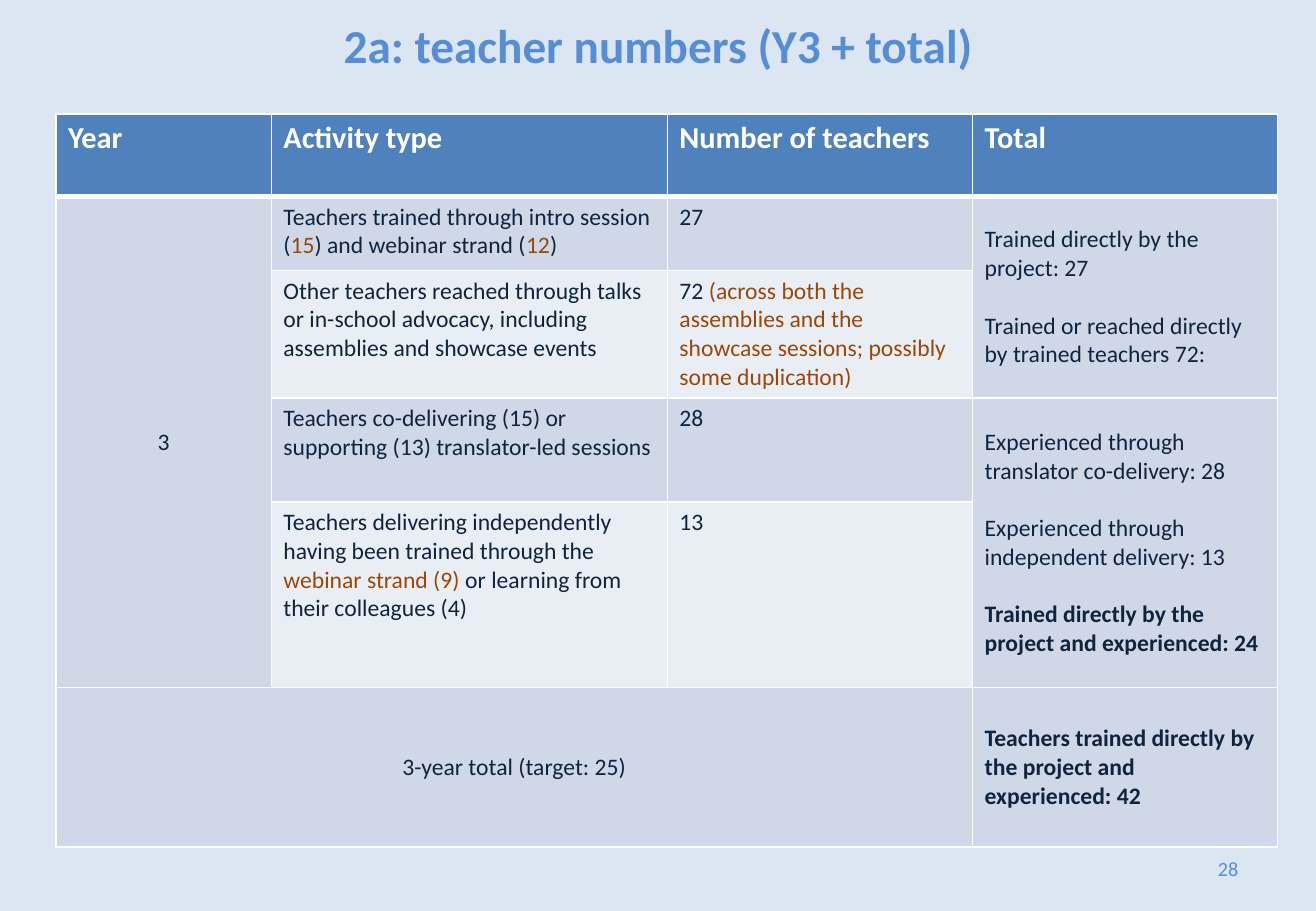
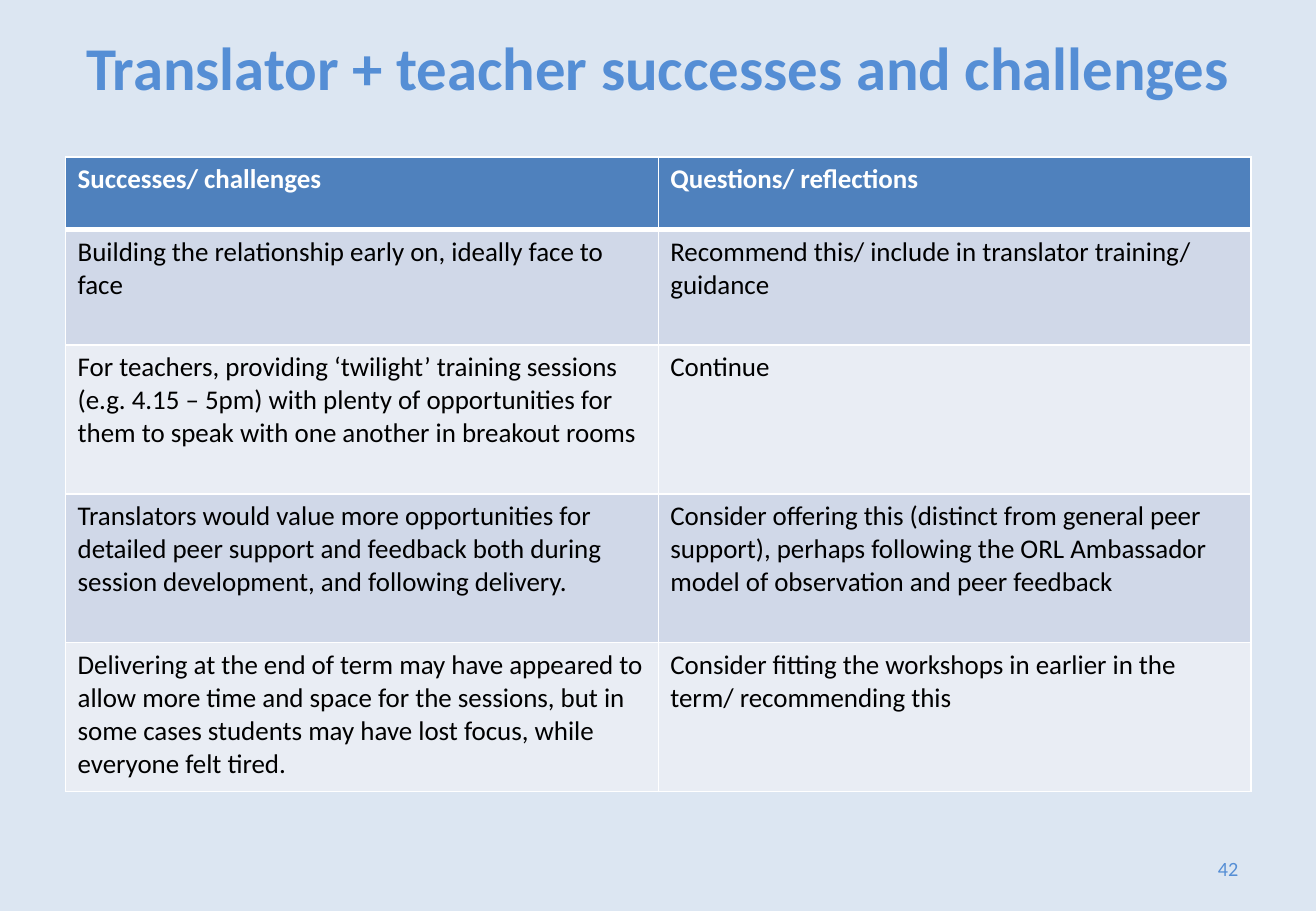
from lxml.etree import SubElement
from pptx import Presentation
from pptx.dml.color import RGBColor
from pptx.enum.text import MSO_ANCHOR, PP_ALIGN
from pptx.oxml.ns import qn
from pptx.util import Cm, Pt

BACK, BLUE, HEAD = "DCE6F2", "558ED5", "4F81BD"
BANDS = "E9EDF4", "D0D8E8"
WHITE, BLACK, NAVY, RUST = "FFFFFF", "000000", "0F243E", "984807"


def rgb(code):
    return RGBColor.from_string(code)


def edge(cell, low):
    """Draw white cell borders; low is the width of the bottom one."""
    props = cell._tc.get_or_add_tcPr()
    for side, width in zip("LRTB", (1, 1, 1, low)):
        line = SubElement(props, qn(f"a:ln{side}"), w=str(Pt(width)))
        fill = SubElement(line, qn("a:solidFill"))
        SubElement(fill, qn("a:srgbClr"), val=WHITE)


class Deck:
    face = "Calibri"

    def __init__(self):
        self.prs = Presentation()
        self.prs.slide_width, self.prs.slide_height = Cm(27.51), Cm(19.05)

    def style(self, para, size, color, bold=False, align=PP_ALIGN.LEFT):
        para.alignment = align
        font = para.font
        font.name, font.size, font.bold = self.face, Pt(size), bold
        font.color.rgb = rgb(color)

    def text(self, words, box, size, align, bold=False):
        frame = self.slide.shapes.add_textbox(*map(Cm, box)).text_frame
        frame.word_wrap = True
        frame.vertical_anchor = MSO_ANCHOR.MIDDLE
        para = frame.paragraphs[0]
        para.text = words
        self.style(para, size, BLUE, bold, align)

    def page(self, title, size, top, height, number):
        """Start a slide with its title and page number."""
        self.slide = self.prs.slides.add_slide(self.prs.slide_layouts[6])
        fill = self.slide.background.fill
        fill.solid()
        fill.fore_color.rgb = rgb(BACK)
        self.text(title, (1.37, top, 24.77, height), size,
                  PP_ALIGN.CENTER, True)
        self.text(number, (19.71, 17.65, 6.43, 1.02), 12, PP_ALIGN.RIGHT)

    def label(self, cell, words, size, color, bold):
        """Fill a cell: newline parts paragraphs, * is bold, |..| is rust."""
        frame = cell.text_frame
        for i, line in enumerate(words.split("\n")):
            para = frame.add_paragraph() if i else frame.paragraphs[0]
            strong = bold or line.startswith("*")
            self.style(para, size, color, strong)
            if i:
                para.space_before = Pt(17)
            for k, part in enumerate(line.lstrip("*").split("|")):
                if part:
                    run = para.add_run()
                    run.text = part
                    if k % 2:
                        run.font.color.rgb = rgb(RUST)

    def table(self, left, top, cols, rows, data, head, size, color):
        """Add a banded table; None marks a cell covered by a merge."""
        grid = self.slide.shapes.add_table(
            len(rows), len(cols), Cm(left), Cm(top),
            Cm(sum(cols)), Cm(sum(rows))).table
        for col, width in zip(grid.columns, cols):
            col.width = Cm(width)
        for row, height in zip(grid.rows, rows):
            row.height = Cm(height)
        for r, line in enumerate(data):
            for c, words in enumerate(line):
                cell = grid.cell(r, c)
                edge(cell, 1 if r else 3)
                cell.fill.solid()
                cell.fill.fore_color.rgb = rgb(BANDS[r % 2] if r else HEAD)
                if words:
                    look = (size, color, False) if r else (head, WHITE, True)
                    self.label(cell, words, *look)
        return grid


def numbers(deck):
    deck.page("2a: teacher numbers (Y3 + total)", 28, 0, 1.85, "28")
    grid = deck.table(
        1.17, 2.38, (4.5, 8.28, 6.38, 6.38),
        (1.73, 1.55, 2.66, 2.18, 3.88, 3.33), [
            ("Year", "Activity type", "Number of teachers", "Total"),
            ("3", "Teachers trained through intro session (|15|) and "
             "webinar strand (|12|)", "27",
             "Trained directly by the project: 27\n"
             "Trained or reached directly by trained teachers 72:"),
            (None, "Other teachers reached through talks or in-school "
             "advocacy, including assemblies and showcase events",
             "72 |(across both the assemblies and the showcase sessions; "
             "possibly some duplication)|", None),
            (None, "Teachers co-delivering (15) or supporting (13) "
             "translator-led sessions", "28",
             "Experienced through translator co-delivery: 28\n"
             "Experienced through independent delivery: 13\n"
             "*Trained directly by the project and experienced: 24"),
            (None, "Teachers delivering independently having been trained "
             "through the |webinar strand (9)| or learning from their "
             "colleagues (4)", "13", None),
            ("3-year total (target: 25)", None, None,
             "*Teachers trained directly by the project and "
             "experienced: 42"),
        ], 18, 14, NAVY)
    for first, last in (((1, 0), (4, 0)), ((1, 3), (2, 3)),
                        ((3, 3), (4, 3)), ((5, 0), (5, 2))):
        cell = grid.cell(*first)
        cell.merge(grid.cell(*last))
        cell.vertical_anchor = MSO_ANCHOR.MIDDLE
        if first[1] == 0:
            cell.text_frame.paragraphs[0].alignment = PP_ALIGN.CENTER
    grid.cell(5, 3).vertical_anchor = MSO_ANCHOR.MIDDLE


def lessons(deck):
    deck.page("Translator + teacher successes and challenges",
              36, 0.13, 2.51, "42")
    deck.table(
        1.37, 3.28, (12.39, 12.39), (1.52, 2.41, 3.12, 3.1, 3.12), [
            ("Successes/ challenges", "Questions/ reflections"),
            ("Building the relationship early on, ideally face to face",
             "Recommend this/ include in translator training/ guidance"),
            ("For teachers, providing ‘twilight’ training sessions (e.g. "
             "4.15 – 5pm) with plenty of opportunities for them to speak "
             "with one another in breakout rooms", "Continue"),
            ("Translators would value more opportunities for detailed peer "
             "support and feedback both during session development, and "
             "following delivery.",
             "Consider offering this (distinct from general peer support), "
             "perhaps following the ORL Ambassador model of observation "
             "and peer feedback"),
            ("Delivering at the end of term may have appeared to allow more "
             "time and space for the sessions, but in some cases students "
             "may have lost focus, while everyone felt tired.",
             "Consider fitting the workshops in earlier in the term/ "
             "recommending this"),
        ], 16, 16, BLACK)


def main():
    deck = Deck()
    numbers(deck)
    lessons(deck)
    deck.prs.save("out.pptx")


if __name__ == "__main__":
    main()
